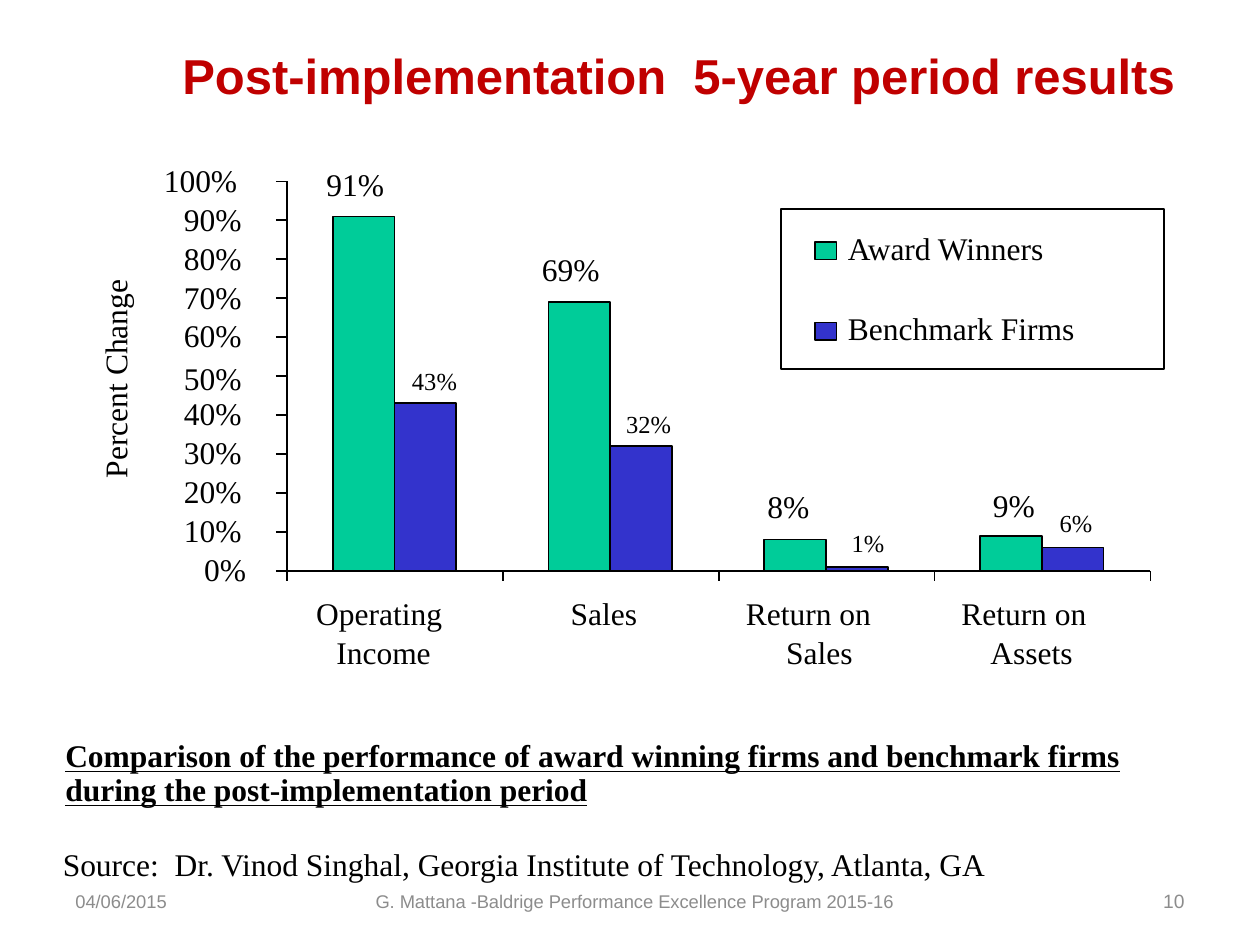
from dataclasses import dataclass

from lxml import etree
from pptx import Presentation
from pptx.dml.color import RGBColor
from pptx.enum.shapes import MSO_CONNECTOR, MSO_SHAPE
from pptx.enum.text import MSO_ANCHOR, MSO_AUTO_SIZE, PP_ALIGN
from pptx.oxml.ns import qn
from pptx.util import Inches, Pt

RECTANGLE = MSO_SHAPE.RECTANGLE
STRAIGHT = MSO_CONNECTOR.STRAIGHT
MIDDLE, TOP = MSO_ANCHOR.MIDDLE, MSO_ANCHOR.TOP
LEFT, CENTER, RIGHT = PP_ALIGN.LEFT, PP_ALIGN.CENTER, PP_ALIGN.RIGHT
NO_FIT, GROW = MSO_AUTO_SIZE.NONE, MSO_AUTO_SIZE.SHAPE_TO_FIT_TEXT


@dataclass(frozen=True)
class Theme:
    sans: str = "Arial"
    serif: str = "Times New Roman"
    title_red: RGBColor = RGBColor(0xC0, 0x00, 0x00)
    footer_grey: RGBColor = RGBColor(0x8C, 0x8C, 0x8C)
    ink: RGBColor = RGBColor(0x00, 0x00, 0x00)
    winners: RGBColor = RGBColor(0x00, 0xCC, 0x99)
    benchmark: RGBColor = RGBColor(0x33, 0x33, 0xCC)
    title_size: float = 28
    body_size: float = 18
    small_size: float = 14
    footer_size: float = 10.5
    page_size: float = 11
    line_width: float = 1


@dataclass(frozen=True)
class Label:
    text: str
    left: float
    top: float
    width: float
    height: float = 0.36


@dataclass(frozen=True)
class Category:
    name_lines: tuple[Label, ...]
    winners: int
    winners_label: Label
    benchmark: int
    benchmark_label: Label


@dataclass(frozen=True)
class Footer:
    label: Label
    align: PP_ALIGN
    size: float


THEME = Theme()

# Plot geometry
AXIS_X, AXIS_END = 2.28, 9.13
BASELINE, AXIS_TOP = 4.53, 1.44
VALUE_STEP = 10
UNIT_HEIGHT = (BASELINE - AXIS_TOP) / 100
BAR_INSET, BAR_WIDTH = 0.36, 0.49
TICK_OUT, TICK_DOWN = 0.09, 0.08
NAME_TOP, SECOND_NAME_TOP = 4.75, 5.06

CATEGORIES = (
    Category((Label("Operating", 2.51, NAME_TOP, 1.16),
              Label("Income", 2.67, SECOND_NAME_TOP, 0.9)),
             91, Label("91%", 2.59, 1.34, 0.59),
             43, Label("43%", 3.27, 2.93, 0.47, 0.3)),
    Category((Label("Sales", 4.53, NAME_TOP, 0.66),),
             69, Label("69%", 4.3, 2.02, 0.59),
             32, Label("32%", 4.97, 3.27, 0.47, 0.3)),
    Category((Label("Return on", 5.92, NAME_TOP, 1.15),
              Label("Sales", 6.24, SECOND_NAME_TOP, 0.66)),
             8, Label("8%", 6.09, 3.9, 0.45),
             1, Label("1%", 6.76, 4.22, 0.36, 0.3)),
    Category((Label("Return on", 7.63, NAME_TOP, 1.15),
              Label("Assets", 7.86, SECOND_NAME_TOP, 0.79)),
             9, Label("9%", 7.88, 3.89, 0.45),
             6, Label("6%", 8.41, 4.06, 0.36, 0.3)),
)
CATEGORY_WIDTH = (AXIS_END - AXIS_X) / len(CATEGORIES)

FOOTERS = (
    Footer(Label("04/06/2015", 0.5, 6.95, 1.11, 0.4), LEFT, THEME.footer_size),
    Footer(Label("G. Mattana -Baldrige Performance Excellence Program 2015-16",
                 2.56, 6.95, 4.96, 0.4), CENTER, THEME.footer_size),
    Footer(Label("10", 8.31, 6.95, 1.19, 0.4), RIGHT, THEME.page_size),
)


def add_text(slide, label: Label, font_name: str, size: float, color: RGBColor,
             align=LEFT, anchor=TOP, fit=NO_FIT):
    box = slide.shapes.add_textbox(Inches(label.left), Inches(label.top),
                                   Inches(label.width), Inches(label.height))
    frame = box.text_frame
    frame.word_wrap = True
    frame.auto_size = fit
    frame.vertical_anchor = anchor
    paragraph = frame.paragraphs[0]
    paragraph.text = label.text
    paragraph.alignment = align
    font = paragraph.font
    font.name, font.size = font_name, Pt(size)
    font.color.rgb = color
    return box


def add_chart_label(slide, label: Label, size: float = THEME.body_size):
    box = add_text(slide, label, THEME.serif, size, THEME.ink, fit=GROW)
    frame = box.text_frame
    frame.word_wrap = False
    frame.margin_left = frame.margin_right = 0
    frame.margin_top = frame.margin_bottom = 0
    frame.paragraphs[0].line_spacing = 0.9
    return box


def add_rectangle(slide, left: float, top: float, width: float, height: float,
                  fill: RGBColor | None = None) -> None:
    box = slide.shapes.add_shape(RECTANGLE, Inches(left), Inches(top),
                                 Inches(width), Inches(height))
    box.shadow.inherit = False
    if fill is None:
        box.fill.background()
    else:
        box.fill.solid()
        box.fill.fore_color.rgb = fill
    box.line.color.rgb = THEME.ink
    box.line.width = Pt(THEME.line_width)


def add_line(slide, x1: float, y1: float, x2: float, y2: float) -> None:
    line = slide.shapes.add_connector(STRAIGHT, Inches(x1), Inches(y1),
                                      Inches(x2), Inches(y2))
    line.line.color.rgb = THEME.ink
    line.line.width = Pt(THEME.line_width)
    etree.SubElement(line._element.spPr, qn("a:effectLst"))


def add_bars(slide) -> None:
    for index, category in enumerate(CATEGORIES):
        left = AXIS_X + index * CATEGORY_WIDTH + BAR_INSET
        bars = ((category.winners, THEME.winners),
                (category.benchmark, THEME.benchmark))
        for position, (value, color) in enumerate(bars):
            height = value * UNIT_HEIGHT
            add_rectangle(slide, left + position * BAR_WIDTH, BASELINE - height,
                          BAR_WIDTH, height, color)


def add_axes(slide) -> None:
    add_line(slide, AXIS_X, AXIS_TOP, AXIS_X, BASELINE)
    add_line(slide, AXIS_X, BASELINE, AXIS_END, BASELINE)
    label_boxes = {0: (1.62, 0.45), 100: (1.3, 0.75)}
    label_nudges = {50: 0.03}
    for value in range(0, 101, VALUE_STEP):
        y = BASELINE - value * UNIT_HEIGHT
        add_line(slide, AXIS_X - TICK_OUT, y, AXIS_X, y)
        left, width = label_boxes.get(value, (1.46, 0.59))
        top = y - 0.13 + label_nudges.get(value, 0)
        add_chart_label(slide, Label(f"{value}%", left, top, width))
    for index in range(len(CATEGORIES) + 1):
        x = AXIS_X + index * CATEGORY_WIDTH
        add_line(slide, x, BASELINE + TICK_DOWN, x, BASELINE)
    axis_title = add_chart_label(slide, Label("Percent Change", 0.09, 2.73, 1.77))
    axis_title.rotation = 270


def add_category_labels(slide) -> None:
    for category in CATEGORIES:
        add_chart_label(slide, category.winners_label)
        add_chart_label(slide, category.benchmark_label, THEME.small_size)
        for name_line in category.name_lines:
            add_chart_label(slide, name_line)


def add_legend(slide) -> None:
    add_rectangle(slide, 6.2, 1.66, 3.04, 1.27)
    entries = (("Award Winners", 1.78, THEME.winners),
               ("Benchmark Firms", 1.99, THEME.benchmark))
    for index, (name, width, color) in enumerate(entries):
        top = 1.92 + index * 0.64
        add_rectangle(slide, 6.47, top, 0.17, 0.14, color)
        add_chart_label(slide, Label(name, 6.73, top - 0.07, width))


def main() -> None:
    presentation = Presentation()
    presentation.slide_width, presentation.slide_height = Inches(10), Inches(7.5)
    slide = presentation.slides.add_slide(presentation.slide_layouts[6])

    # Footer and title
    for footer in FOOTERS:
        add_text(slide, footer.label, THEME.sans, footer.size, THEME.footer_grey,
                 footer.align, MIDDLE)
    title = add_text(
        slide, Label("Post-implementation  5-year period results", 1.04, 0.28, 8.69, 0.63),
        THEME.sans, THEME.title_size, THEME.title_red, CENTER, MIDDLE)
    title.text_frame.paragraphs[0].font.bold = True

    # Bar diagram
    add_bars(slide)
    add_axes(slide)
    add_category_labels(slide)
    add_legend(slide)

    # Source and caption
    add_text(slide, Label("Source:  Dr. Vinod Singhal, Georgia Institute of Technology, "
                          "Atlanta, GA", 0.4, 6.66, 9.1, 0.4),
             THEME.serif, THEME.body_size, THEME.ink, fit=GROW)
    caption = add_text(
        slide, Label("Comparison of the performance of award winning firms and benchmark "
                     "firms during the post-implementation period", 0.42, 5.83, 8.67, 0.64),
        THEME.serif, THEME.body_size, THEME.ink, fit=GROW).text_frame.paragraphs[0]
    caption.line_spacing = 0.9
    caption.font.bold = caption.font.underline = True

    presentation.save("out.pptx")


if __name__ == "__main__":
    main()
